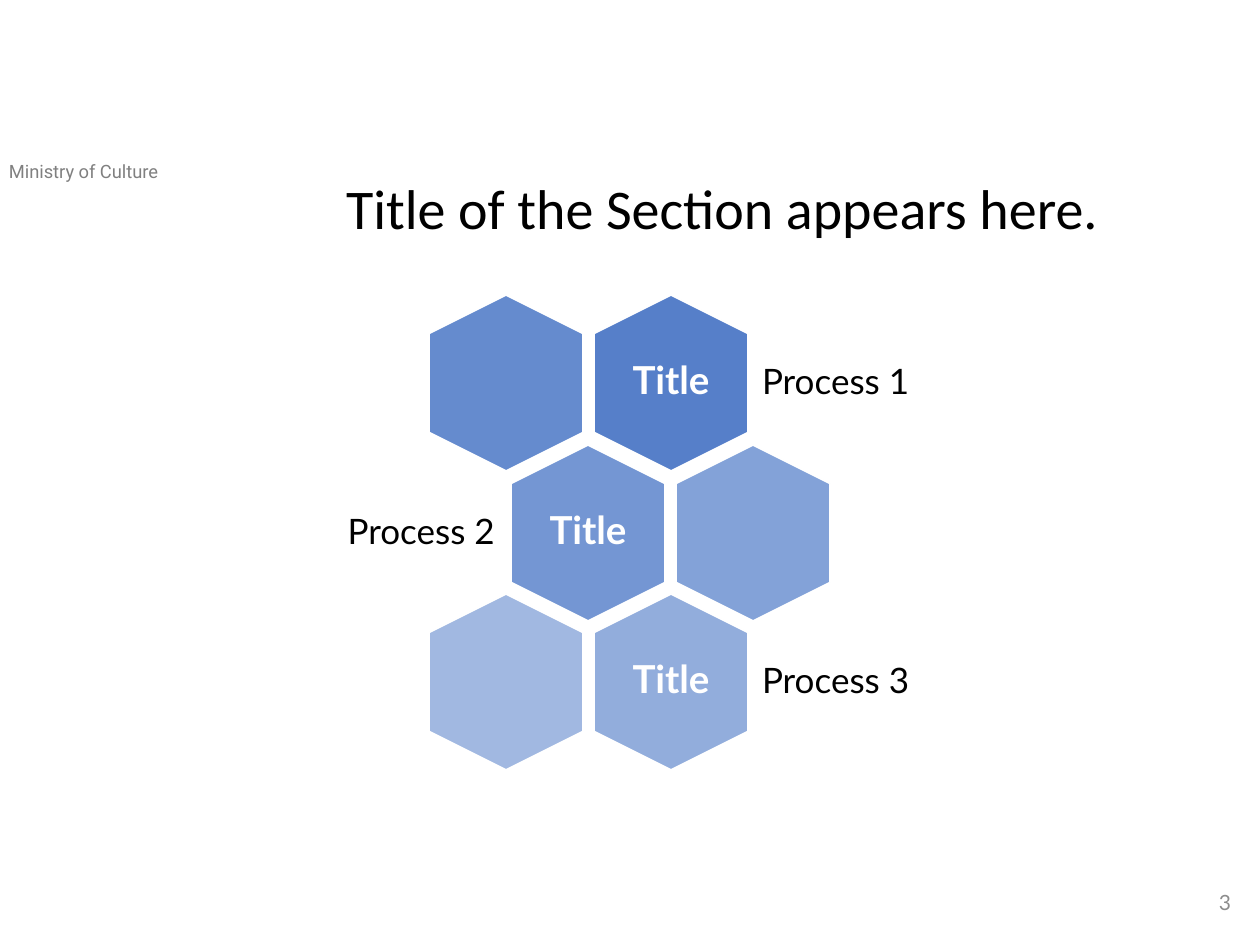
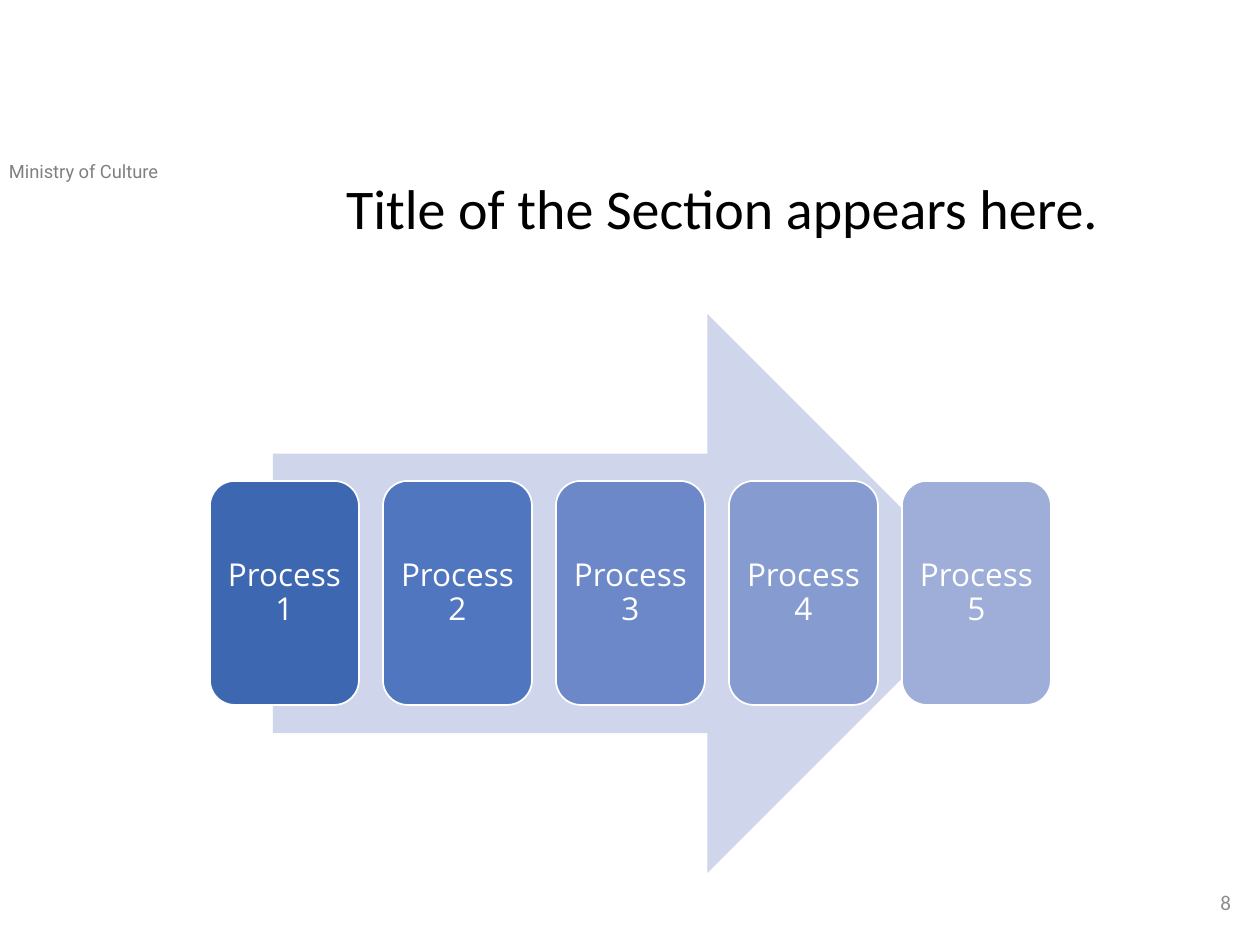
from lxml import etree
from pptx import Presentation, util as u
from pptx.dml.color import RGBColor
from pptx.enum import shapes, text
from pptx.oxml.ns import qn

PX = 914400 / 126  # EMU in one px

WHITE, BLACK, BLUE, PALE_BLUE = "FFFFFF", "000000", "4472C4", "CFD5EA"
FOOTER_GREY, NUMBER_GREY = "808080", "8C8C8C"
CARD_COLOURS = ("3E67B2", "5176C0", "6C88C8", "869BD0", "9FAED8")

LEFT, CENTER, RIGHT = text.PP_ALIGN.LEFT, text.PP_ALIGN.CENTER, text.PP_ALIGN.RIGHT
TOP, MIDDLE = text.MSO_ANCHOR.TOP, text.MSO_ANCHOR.MIDDLE

# Hexagon grid: every second row is shifted by half a step
HEX_LENGTH, HEX_WIDTH = 176, 154
HEX_LEFT, HEX_STEP, HEX_SHIFT = 418, 165, 82
HEX_TOPS = (306, 456, 605)


def px(*lengths):
    return [u.Emu(round(length * PX)) for length in lengths]


def colour(value):
    return RGBColor.from_string(value)


def write(shape, words, *, font, size, color, bold=False, align=LEFT,
          anchor=TOP, spacing=1.0, insets=(13, 6)):
    frame = shape.text_frame
    frame.word_wrap = True
    frame.auto_size = text.MSO_AUTO_SIZE.NONE
    frame.vertical_anchor = anchor
    frame.margin_left, frame.margin_top = px(*insets)
    frame.margin_right, frame.margin_bottom = px(*insets)
    para = frame.paragraphs[0]
    para.alignment, para.line_spacing = align, spacing
    span = para.add_run()
    span.text = words
    span.font.name, span.font.size, span.font.bold = font, u.Pt(size), bold
    span.font.color.rgb = colour(color)


def add_text(page, place, words, **style):
    write(page.shapes.add_textbox(*px(*place)), words, **style)


def add_block(page, kind, place, fill, outline=None, opacity=100):
    block = page.shapes.add_shape(kind, *px(*place))
    block.shadow.inherit = False
    block.fill.solid()
    block.fill.fore_color.rgb = colour(fill)
    if opacity < 100:
        tint = block.fill._xPr.find(".//" + qn("a:srgbClr"))
        etree.SubElement(tint, qn("a:alpha"), val=str(opacity * 1000))
    if outline:
        block.line.color.rgb = colour(outline)
        block.line.width = u.Pt(1)
    else:
        block.line.fill.background()
    return block


def add_page(deck, number, number_font):
    """Add a page with the shared title, footer and page number."""
    page = deck.slides.add_slide(deck.slide_layouts[5])
    title = page.shapes.title
    title.left, title.top, title.width, title.height = px(333, 175, 804, 100)
    write(title, "Title of the Section appears here.", font="Calibri", size=32,
          color=BLACK, spacing=0.9)
    add_text(page, (-4, 154, 275, 35), "Ministry of Culture", font="Roboto",
             size=10.5, color=FOOTER_GREY)
    add_text(page, (960, 877, 284, 50), str(number), font=number_font, size=12,
             color=NUMBER_GREY, align=RIGHT, anchor=MIDDLE)
    return page


def add_hexagon(page, row, column, opacity, process=None):
    left = HEX_LEFT + column * HEX_STEP + row % 2 * HEX_SHIFT
    top = HEX_TOPS[row]
    hexagon = add_block(page, shapes.MSO_SHAPE.HEXAGON,
                        (left, top, HEX_LENGTH, HEX_WIDTH), BLUE, WHITE, opacity)
    hexagon.rotation = 90
    hexagon.adjustments[0] = 0.25
    hexagon.adjustments[1] = 1.1547
    if process is None:
        return
    # The words stay upright, so they have boxes of their own
    add_text(page, (left + 35, top + 16, 106, 121), "Title", font="Lato", size=22,
             color=WHITE, bold=True, align=CENTER, anchor=MIDDLE, spacing=0.9,
             insets=(11, 11))
    on_left = row % 2 == 1
    label_left, width = (left - 185, 190) if on_left else (left + 169, 197)
    add_text(page, (label_left, top + 24, width, 106), process, font="Lato", size=20,
             color=BLACK, align=RIGHT if on_left else LEFT, anchor=MIDDLE,
             spacing=0.9, insets=(10, 10))


def add_hexagon_page(deck):
    page = add_page(deck, 3, "Lato")
    titled_columns = (1, 0, 1)
    opacity = 90
    for row, titled in enumerate(titled_columns):
        add_hexagon(page, row, titled, opacity, f"Process {row + 1}")
        add_hexagon(page, row, 1 - titled, opacity - 8)
        opacity -= 16


def add_arrow_page(deck):
    page = add_page(deck, 8, "Calibri")
    add_block(page, shapes.MSO_SHAPE.RIGHT_ARROW, (273, 314, 714, 559), PALE_BLUE)
    for index, fill in enumerate(CARD_COLOURS):
        card = add_block(page, shapes.MSO_SHAPE.ROUNDED_RECTANGLE,
                         (210 + index * 173, 481, 149, 224), fill, WHITE)
        write(card, f"Process {index + 1}", font="Open Sans", size=18, color=WHITE,
              align=CENTER, anchor=MIDDLE, spacing=0.9, insets=(8, 8))


def main():
    deck = Presentation()
    deck.slide_width, deck.slide_height = px(1260, 945)
    add_hexagon_page(deck)
    add_arrow_page(deck)
    deck.save("out.pptx")


if __name__ == "__main__":
    main()
